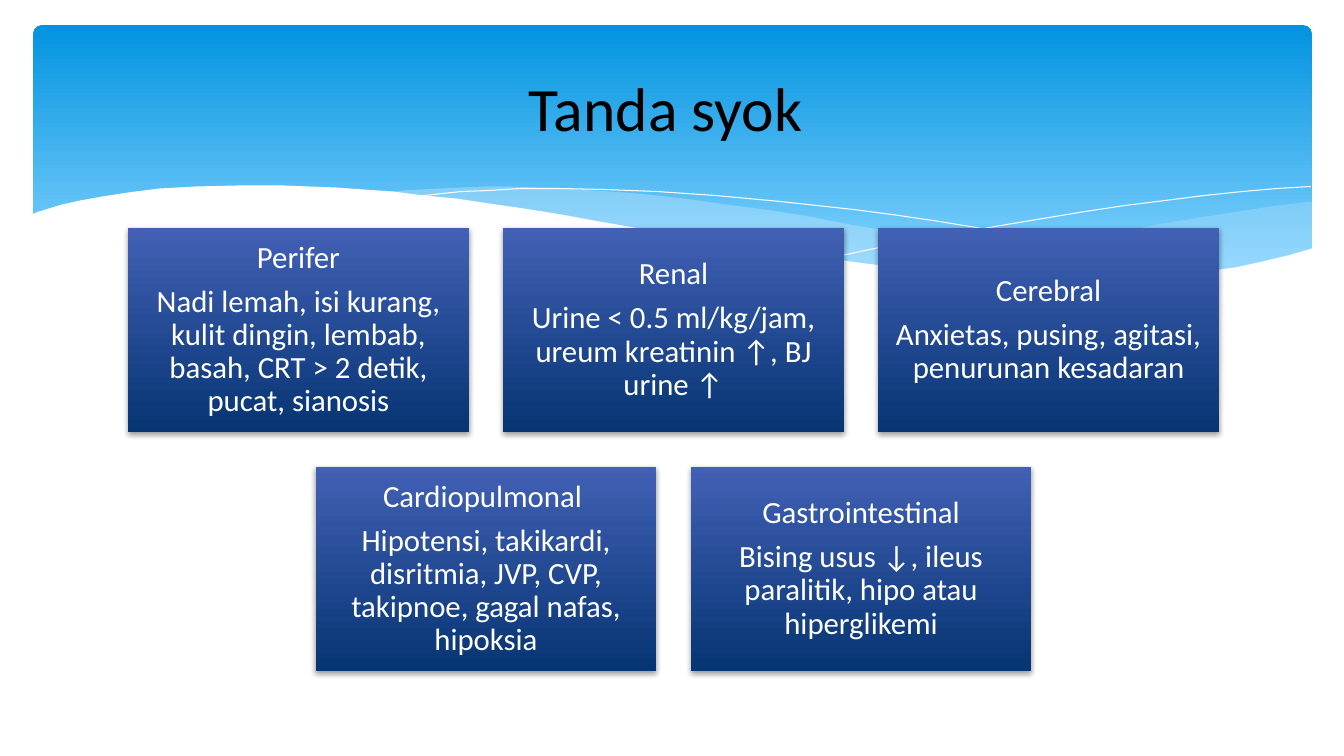
"""Build the "Tanda syok" slide: a wave banner above five cards of shock signs."""
from dataclasses import dataclass

from lxml.etree import SubElement
from pptx import Presentation
from pptx.dml.color import RGBColor
from pptx.enum.shapes import MSO_SHAPE as SHAPE
from pptx.enum.text import MSO_ANCHOR as ANCHOR, PP_ALIGN as ALIGN
from pptx.oxml.ns import qn
from pptx.util import Emu, Pt

PX = 9144


@dataclass(frozen=True)
class Theme:
    font: str = "Calibri"
    title_size: int = 44
    card_size: int = 22
    title: str = "000000"
    white: str = "FFFFFF"
    mist: str = "C6E7FC"
    sky: tuple = (("0293E0", 0), ("83D3FE", 0.9))
    navy: tuple = (("4260B5", 0), ("063573", 1))
    shadow: str = "000000"


T = Theme()
TITLE = "Tanda syok "
ROWS = [
    [("Perifer", "Nadi lemah, isi kurang, kulit dingin, lembab, basah, CRT > 2 detik, pucat, sianosis"),
     ("Renal", "Urine < 0.5 ml/kg/jam, ureum kreatinin ↑, BJ urine ↑"),
     ("Cerebral", "Anxietas, pusing, agitasi, penurunan kesadaran")],
    [("Cardiopulmonal ", "Hipotensi, takikardi, disritmia, JVP, CVP, takipnoe, gagal nafas, hipoksia"),
     ("Gastrointestinal", "Bising usus ↓, ileus paralitik, hipo atau hiperglikemi")],
]
SLIDE = (1333, 750)
TITLE_BOX = (67, 37, 1200, 137)
BANNER_BOX = (33, 25, 1268, 270)
CARD_W, CARD_H, GAP, INSET = 338, 203, 34, 9
CARDS_CENTER, CARDS_TOP = 668, 226

RIGHT_MIST = [
    (1300, 200), (1265, 204), (1227, 210), (1188, 216), (1147, 223), (1110, 230),
    (1073, 237), (1038, 242), (1005, 248), (972, 253), (941, 257), (911, 262),
    (882, 265), (921, 269), (958, 272), (993, 275), (1025, 277), (1071, 278),
    (1113, 277), (1151, 275), (1186, 272), (1218, 267), (1247, 262), (1266, 257),
    (1284, 252), (1301, 247), (1301, 200),
]
MIDDLE_MIST = [
    (1190, 273), (1154, 269), (1116, 265), (1076, 260), (1034, 254), (989, 247),
    (941, 240), (891, 231), (839, 222), (798, 214), (759, 208), (721, 203),
    (686, 198), (652, 194), (619, 191), (589, 189), (560, 187), (532, 186),
    (506, 185), (482, 185), (459, 186), (437, 187), (418, 188), (399, 189),
    (382, 191), (431, 196), (483, 203), (539, 211), (599, 222), (654, 232),
    (706, 240), (755, 248), (802, 255), (846, 261), (887, 266), (926, 270),
    (963, 274), (998, 276), (1030, 277), (1061, 278), (1104, 278), (1143, 277),
    (1167, 275), (1190, 273),
]
LONG_STREAK = [
    (412, 195), (438, 192), (458, 190), (484, 189), (516, 187), (555, 187),
    (600, 188), (652, 190), (710, 194), (775, 200), (848, 208), (886, 213),
    (927, 219), (970, 226), (1014, 233), (1060, 241), (1108, 251), (1158, 261),
    (1210, 272),
]
SHORT_STREAK = [
    (818, 257), (870, 246), (927, 235), (997, 223), (1075, 210), (1115, 204),
    (1155, 199), (1194, 194), (1232, 190), (1267, 187), (1300, 185),
]
WHITE_WAVE = [
    (1303, 246), (1279, 253), (1254, 259), (1227, 265), (1198, 269), (1167, 273),
    (1134, 275), (1097, 277), (1058, 276), (1015, 275), (969, 272), (918, 268),
    (863, 262), (804, 254), (740, 245), (671, 233), (596, 220), (558, 213),
    (521, 207), (486, 202), (453, 197), (421, 194), (390, 190), (361, 188),
    (333, 186), (306, 185), (282, 184), (235, 184), (194, 185), (158, 187),
    (127, 191), (101, 195), (79, 199), (61, 203), (48, 207), (38, 210),
    (31, 213), (31, 329), (1303, 329),
]
WAVES = [(RIGHT_MIST, T.mist, 29), (MIDDLE_MIST, T.mist, 40),
         (LONG_STREAK, None, None), (SHORT_STREAK, None, None),
         (WHITE_WAVE, T.white, 100)]


def rgb(code):
    return RGBColor.from_string(code)


def px(box):
    return [Emu(v * PX) for v in box]


def add_gradient_box(shapes, kind, box, stops):
    sp = shapes.add_shape(kind, *px(box))
    sp.shadow.inherit = False
    sp.line.fill.background()
    sp.fill.gradient()
    sp.fill.gradient_angle = 270
    for stop, (code, position) in zip(sp.fill.gradient_stops, stops):
        stop.color.rgb = rgb(code)
        stop.position = position
    return sp


def add_wave(shapes, points, color, opacity):
    builder = shapes.build_freeform(*points[0], scale=PX)
    builder.add_line_segments(points[1:], close=color is not None)
    sp = builder.convert_to_shape()
    sp.shadow.inherit = False
    if color is None:
        sp.fill.background()
        sp.line.color.rgb = rgb(T.white)
        sp.line.width = Pt(0)
        return
    sp.line.fill.background()
    sp.fill.solid()
    sp.fill.fore_color.rgb = rgb(color)
    if opacity < 100:
        clr = sp.element.spPr.find(".//" + qn("a:srgbClr"))
        SubElement(clr, qn("a:alpha"), val=str(opacity * 1000))


def add_shadow(sp):
    effects = sp.element.spPr.find(qn("a:effectLst"))
    outer = SubElement(effects, qn("a:outerShdw"), blurRad=str(Pt(4)), dist=str(Pt(2)),
                       dir="5400000", algn="ctr", rotWithShape="0")
    clr = SubElement(outer, qn("a:srgbClr"), val=T.shadow)
    SubElement(clr, qn("a:alpha"), val="38000")


def add_text(p, text, size, color):
    p.alignment = ALIGN.CENTER
    r = p.add_run()
    r.text = text
    r.font.name = T.font
    r.font.size = Pt(size)
    r.font.color.rgb = rgb(color)


def add_card(shapes, left, top, heading, signs):
    sp = add_gradient_box(shapes, SHAPE.RECTANGLE, (left, top, CARD_W, CARD_H), T.navy)
    add_shadow(sp)
    tf = sp.text_frame
    tf.word_wrap = True
    tf.vertical_anchor = ANCHOR.MIDDLE
    tf.margin_left = tf.margin_right = tf.margin_top = tf.margin_bottom = Emu(INSET * PX)
    for p, text in ((tf.paragraphs[0], heading), (tf.add_paragraph(), signs)):
        p.line_spacing = 0.9
        add_text(p, text, T.card_size, T.white)
    tf.paragraphs[0].space_after = Pt(T.card_size * 0.35)


def main():
    prs = Presentation()
    prs.slide_width, prs.slide_height = px(SLIDE)
    s = prs.slides.add_slide(prs.slide_layouts[5])
    shapes = s.shapes

    banner = add_gradient_box(shapes, SHAPE.ROUNDED_RECTANGLE, BANNER_BOX, T.sky)
    banner.adjustments[0] = 0.03
    for wave in WAVES:
        add_wave(shapes, *wave)

    for i, row in enumerate(ROWS):
        row_w = len(row) * (CARD_W + GAP) - GAP
        top = CARDS_TOP + i * (CARD_H + GAP)
        for j, card in enumerate(row):
            left = CARDS_CENTER - row_w // 2 + j * (CARD_W + GAP)
            add_card(shapes, left, top, *card)

    title = shapes.title
    title.left, title.top, title.width, title.height = px(TITLE_BOX)
    title.text_frame.vertical_anchor = ANCHOR.MIDDLE
    add_text(title.text_frame.paragraphs[0], TITLE, T.title_size, T.title)
    title.element.getparent().append(title.element)

    prs.save("out.pptx")


if __name__ == "__main__":
    main()
